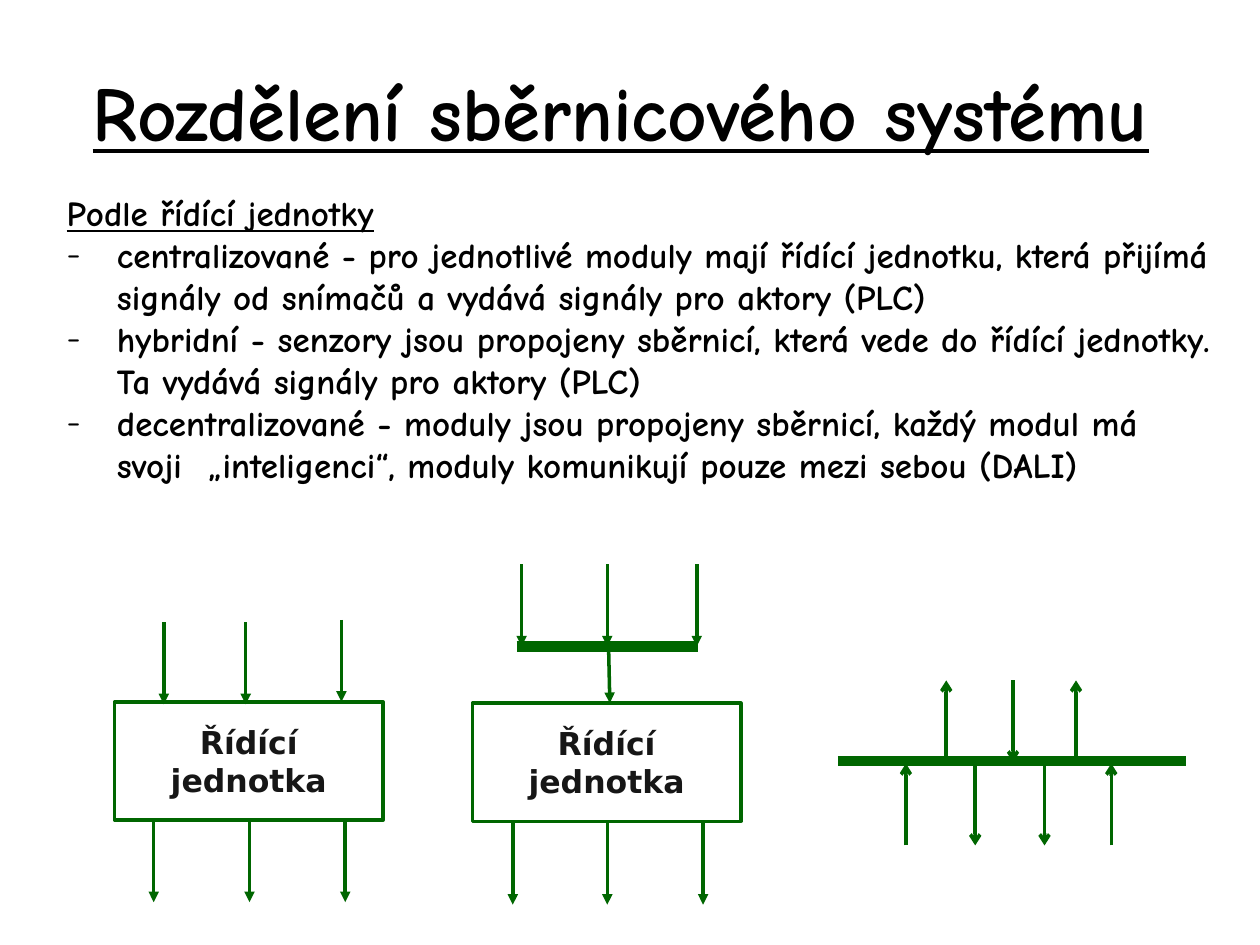
from lxml import etree
from pptx import Presentation
from pptx import util as u
from pptx.dml.color import RGBColor
from pptx.enum import shapes, text
from pptx.oxml.ns import qn


def colour(value):
    return RGBColor.from_string(value)


class SlideBuilder:
    green = "006600"
    black = "000000"
    label_colour = "161616"
    body_font = "Comic Neue"
    label_font = "DejaVu Sans"
    arrow_length = 0.65

    def __init__(self, slide):
        self.slide = slide

    def group(self):
        return self.slide.shapes.add_group_shape()

    def span(self, para, words, size, font, ink, underline=False):
        span = para.add_run()
        span.text = words
        span.font.size = u.Pt(size)
        span.font.name = font
        span.font.bold = True
        span.font.underline = underline
        span.font.color.rgb = colour(ink)

    def text_box(self, left, top, width, height, anchor):
        box = self.slide.shapes.add_textbox(*map(u.Inches, (left, top, width, height)))
        box.text_frame.word_wrap = True
        box.text_frame.vertical_anchor = anchor
        return box.text_frame

    def title(self, words):
        frame = self.text_box(0.12, 0.29, 9.61, 1.18, text.MSO_ANCHOR.MIDDLE)
        para = frame.paragraphs[0]
        para.alignment = text.PP_ALIGN.CENTER
        self.span(para, words, 44, self.body_font, self.black, True)

    def body(self, heading, items):
        frame = self.text_box(0.43, 1.47, 9.29, 3.13, text.MSO_ANCHOR.TOP)
        self.span(frame.paragraphs[0], heading, 20, self.body_font, self.black, True)
        for item in items:
            para = frame.add_paragraph()
            properties = para._p.get_or_add_pPr()
            properties.set("marL", str(u.Inches(0.4)))
            properties.set("indent", str(u.Inches(-0.4)))
            etree.SubElement(properties, qn("a:buFont"), typeface=self.body_font)
            etree.SubElement(properties, qn("a:buChar"), char="-")
            self.span(para, item, 20, self.body_font, self.black)

    def unit(self, group, left, top, words):
        box = group.shapes.add_shape(
            shapes.MSO_SHAPE.RECTANGLE, *map(u.Inches, (left, top, 2.13, 0.94)))
        box.shadow.inherit = False
        box.fill.background()
        box.line.color.rgb = colour(self.green)
        box.line.width = u.Pt(2)
        frame = box.text_frame
        frame.word_wrap = True
        frame.vertical_anchor = text.MSO_ANCHOR.MIDDLE
        para = frame.paragraphs[0]
        para.alignment = text.PP_ALIGN.CENTER
        self.span(para, words, 18, self.label_font, self.label_colour)

    def line(self, group, start, end, width=2, head=None):
        line = group.shapes.add_connector(
            shapes.MSO_CONNECTOR.STRAIGHT, *map(u.Inches, (*start, *end)))
        line.line.color.rgb = colour(self.green)
        line.line.width = u.Pt(width)
        if head:
            etree.SubElement(line.line._get_or_add_ln(), qn("a:tailEnd"), type=head)
        etree.SubElement(line._element.spPr, qn("a:effectLst"))

    def arrows(self, group, columns, top, head="triangle", up=False):
        ends = (top, top + self.arrow_length)
        start, end = reversed(ends) if up else ends
        for x in columns:
            self.line(group, (x, start), (x, end), head=head)


def main():
    deck = Presentation()
    deck.slide_width, deck.slide_height = u.Inches(10), u.Inches(7.5)
    page = SlideBuilder(deck.slides.add_slide(deck.slide_layouts[6]))

    page.title("Rozdělení sběrnicového systému")
    page.body("Podle řídící jednotky", [
        "centralizované - pro jednotlivé moduly mají řídící jednotku, která přijímá "
        "signály od snímačů a vydává signály pro aktory (PLC)",
        "hybridní - senzory jsou propojeny sběrnicí, která vede do řídící jednotky. "
        "Ta vydává signály pro aktory (PLC)",
        "decentralizované - moduly jsou propojeny sběrnicí, každý modul má "
        "svoji  „inteligenci“, moduly komunikují pouze mezi sebou (DALI)",
    ])

    centralized = page.group()
    page.unit(centralized, 0.91, 5.57, "Řídící jednotka")
    page.arrows(centralized, (1.3, 1.95), 4.94)
    page.arrows(centralized, (2.71,), 4.92)
    page.arrows(centralized, (1.22, 1.98, 2.74), 6.51)

    hybrid = page.group()
    page.unit(hybrid, 3.75, 5.58, "Řídící jednotka")
    page.arrows(hybrid, (4.14, 4.82, 5.53), 4.48)
    page.arrows(hybrid, (4.07, 4.82, 5.58), 6.53)
    page.line(hybrid, (4.1, 5.13), (5.54, 5.13), width=6)
    page.line(hybrid, (4.83, 5.13), (4.84, 5.58), head="triangle")

    decentralized = page.group()
    page.arrows(decentralized, (7.19, 8.82), 6.06, "arrow", up=True)
    page.arrows(decentralized, (7.74, 8.29), 6.06, "arrow")
    page.arrows(decentralized, (8.04,), 5.4, "arrow")
    page.arrows(decentralized, (7.51, 8.54), 5.4, "arrow", up=True)
    page.line(decentralized, (6.65, 6.04), (9.41, 6.04), width=6)

    deck.save("out.pptx")


if __name__ == "__main__":
    main()
